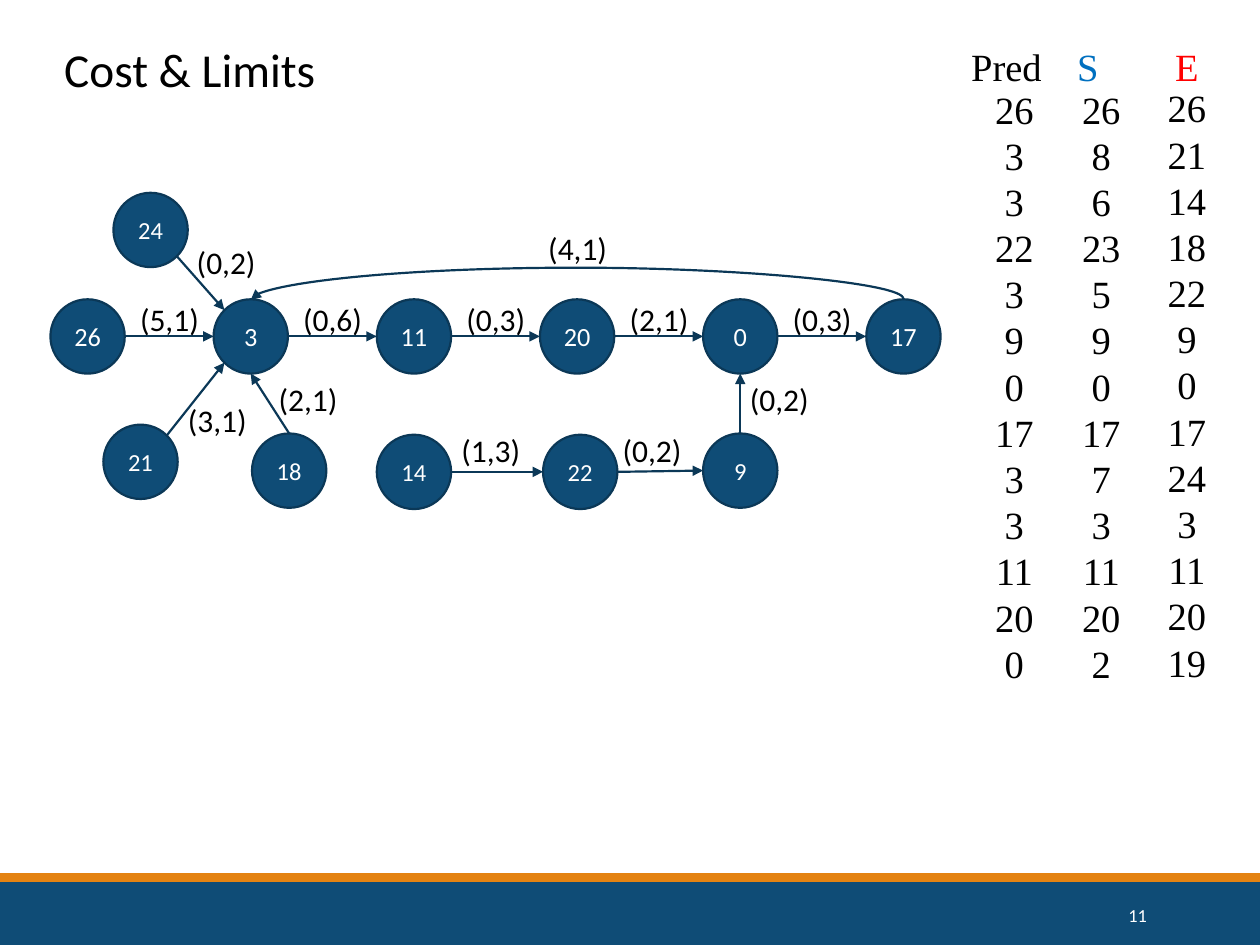
from math import cos, radians, sin

from lxml.etree import SubElement
from pptx import Presentation
from pptx.dml.color import RGBColor
from pptx.enum.shapes import MSO_CONNECTOR, MSO_SHAPE
from pptx.enum.text import MSO_ANCHOR, MSO_AUTO_SIZE, PP_ALIGN
from pptx.oxml.ns import qn
from pptx.util import Inches, Pt

BLUE = RGBColor(0x0F, 0x4C, 0x76)
DARK_BLUE = RGBColor(0x0B, 0x38, 0x57)
ORANGE = RGBColor(0xE4, 0x83, 0x12)
HEADER_BLUE = RGBColor(0x00, 0x70, 0xC0)
RED = RGBColor(0xFF, 0x00, 0x00)
BLACK = RGBColor(0x00, 0x00, 0x00)
WHITE = RGBColor(0xFF, 0xFF, 0xFF)

SANS = "Calibri"
SERIF = "Times New Roman"
DIAMETER = 0.59
STEP = 1.295  # distance between neighbours in the upper row

# Connection sites of an ellipse, counterclockwise from the top
TOP, TOP_LEFT, LEFT, BOTTOM_LEFT, BOTTOM, BOTTOM_RIGHT, RIGHT, TOP_RIGHT = range(8)


class GraphSlide:
    """Holds the slide, its style and the nodes drawn so far."""

    def __init__(self, slide):
        self.slide = slide
        self.nodes = {}

    def fill_text(self, shape, text, size, color=BLACK, font=SANS,
                  align=PP_ALIGN.CENTER, anchor=MSO_ANCHOR.TOP, spacing=None):
        frame = shape.text_frame
        frame.text = text
        frame.word_wrap = True
        frame.vertical_anchor = anchor
        for paragraph in frame.paragraphs:
            paragraph.alignment = align
            if spacing:
                paragraph.line_spacing = Pt(spacing)
            for run in paragraph.runs:
                run.font.name = font
                run.font.size = Pt(size)
                run.font.color.rgb = color

    def title(self, text, left, top, width, height):
        shape = self.slide.shapes.title
        shape.left, shape.top = Inches(left), Inches(top)
        shape.width, shape.height = Inches(width), Inches(height)
        self.fill_text(shape, text, 27, align=PP_ALIGN.LEFT)
        shape.text_frame.auto_size = MSO_AUTO_SIZE.NONE

    def text(self, text, left, top, width, height, size, **style):
        shape = self.slide.shapes.add_textbox(
            Inches(left), Inches(top), Inches(width), Inches(height))
        self.fill_text(shape, text, size, **style)

    def label(self, text, left, top):
        self.text(text, left, top, 0.71, 0.4, 18)

    def shape(self, kind, left, top, width, height, fill):
        shape = self.slide.shapes.add_shape(
            kind, Inches(left), Inches(top), Inches(width), Inches(height))
        shape.shadow.inherit = False
        shape.fill.solid()
        shape.fill.fore_color.rgb = fill
        shape.line.fill.background()
        return shape

    def node(self, name, left, top, size):
        shape = self.shape(MSO_SHAPE.OVAL, left, top, DIAMETER, DIAMETER, BLUE)
        shape.line.color.rgb = DARK_BLUE
        shape.line.width = Pt(1.25)
        frame = shape.text_frame
        frame.margin_left = frame.margin_right = 0
        self.fill_text(shape, name, size, WHITE, anchor=MSO_ANCHOR.MIDDLE)
        self.nodes[name] = shape

    def site_point(self, name, site):
        shape = self.nodes[name]
        angle = radians(90 + 45 * site)
        radius = shape.width / 2
        return (round(shape.left + radius * (1 + cos(angle))),
                round(shape.top + radius * (1 - sin(angle))))

    def arrow(self, start, start_site, end, end_site, kind=MSO_CONNECTOR.STRAIGHT):
        connector = self.slide.shapes.add_connector(
            kind, *self.site_point(start, start_site), *self.site_point(end, end_site))
        connector.line.color.rgb = DARK_BLUE
        connector.line.width = Pt(1.25)
        properties = connector.element.spPr
        SubElement(properties.find(qn("a:ln")), qn("a:tailEnd"), type="triangle")
        SubElement(properties, qn("a:effectLst"))
        # An ellipse has eight sites, so the joins are set directly
        joins = connector.element.nvCxnSpPr.cNvCxnSpPr
        for tag, name, site in (("a:stCxn", start, start_site), ("a:endCxn", end, end_site)):
            SubElement(joins, qn(tag), id=str(self.nodes[name].shape_id), idx=str(site))
        return connector

    def arch(self, start, end, rise):
        """Curved arrow over the tops of two nodes: a thin connector turned upright."""
        connector = self.arrow(start, TOP, end, TOP, MSO_CONNECTOR.CURVE)
        middle, top, span = connector.left + connector.width // 2, connector.top, connector.width
        thickness = Inches(0.01)
        connector.left, connector.top = middle - thickness // 2, top - span // 2
        connector.width, connector.height = thickness, span
        properties = connector.element.spPr
        transform = properties.find(qn("a:xfrm"))
        for key, value in (("rot", "16200000"), ("flipH", "1"), ("flipV", "1")):
            transform.set(key, value)
        geometry = properties.find(qn("a:prstGeom"))
        guides = geometry.find(qn("a:avLst"))
        if guides is None:
            guides = SubElement(geometry, qn("a:avLst"))
        ratio = round(-Inches(rise) / thickness * 100000)
        SubElement(guides, qn("a:gd"), name="adj1", fmla=f"val {ratio}")


def main():
    presentation = Presentation()
    presentation.slide_width, presentation.slide_height = Inches(10), Inches(7.5)
    graph = GraphSlide(presentation.slides.add_slide(presentation.slide_layouts[5]))

    # Footer bars, title and page number
    graph.shape(MSO_SHAPE.RECTANGLE, 0, 7, 10, 0.5, BLUE)
    graph.shape(MSO_SHAPE.RECTANGLE, 0, 6.93, 10, 0.07, ORANGE)
    graph.title("Cost & Limits", 0.41, 0.27, 4.43, 0.56)
    graph.text("11", 8.12, 7.06, 1.08, 0.4, 10.5, color=WHITE,
               align=PP_ALIGN.RIGHT, anchor=MSO_ANCHOR.MIDDLE)

    # Columns of numbers: header with its left, width, colour and alignment, then the list
    columns = [
        ("Pred", 7.61, 0.88, BLACK, PP_ALIGN.LEFT, 7.76, 0.63,
         "26 3 3 22 3 9 0 17 3 3 11 20 0"),
        ("S", 8.45, 0.58, HEADER_BLUE, PP_ALIGN.LEFT, 8.45, 0.63,
         "26 8 6 23 5 9 0 17 7 3 11 20 2"),
        ("E", 9.13, 0.58, RED, PP_ALIGN.CENTER, 9.13, 0.62,
         "26 21 14 18 22 9 0 17 24 3 11 20 19"),
    ]
    for header, header_left, width, color, align, left, top, values in columns:
        graph.text(header, header_left, 0.27, width, 0.47, 22, color=color,
                   font=SERIF, align=align, spacing=28)
        graph.text("\n".join(values.split()), left, top, 0.58, 4.91, 22,
                   font=SERIF, spacing=26.4)

    # Nodes: the evenly spaced upper row, then the others
    chain = ["26", "3", "11", "20", "0", "17"]
    for index, name in enumerate(chain):
        graph.node(name, 0.4 + STEP * index, 2.375, 15)
    for name, left, top in [("24", 0.9, 1.53), ("21", 0.82, 3.37), ("18", 2, 3.44),
                            ("14", 2.99, 3.45), ("22", 4.31, 3.45), ("9", 5.58, 3.44)]:
        graph.node(name, left, top, 14)

    # Arrows and labels along the upper row
    chain_labels = ["(5,1)", "(0,6)", "(0,3)", "(2,1)", "(0,3)"]
    for index, (start, end, label) in enumerate(zip(chain, chain[1:], chain_labels)):
        graph.arrow(start, RIGHT, end, LEFT)
        graph.label(label, 0.99 + STEP * index, 2.33)

    # Other arrows with their labels
    for start, start_site, end, end_site, label, left, top in [
        ("24", BOTTOM_RIGHT, "3", TOP_LEFT, "(0,2)", 1.44, 1.88),
        ("21", TOP_RIGHT, "3", BOTTOM_LEFT, "(3,1)", 1.37, 3.13),
        ("18", TOP, "3", BOTTOM, "(2,1)", 2.09, 2.97),
        ("14", RIGHT, "22", LEFT, "(1,3)", 3.54, 3.37),
        ("22", RIGHT, "9", LEFT, "(0,2)", 4.82, 3.37),
        ("9", TOP, "0", BOTTOM, "(0,2)", 5.83, 2.97),
    ]:
        graph.arrow(start, start_site, end, end_site)
        graph.label(label, left, top)

    # Return arrow
    graph.arch("17", "3", 0.25)
    graph.label("(4,1)", 4.23, 1.77)

    presentation.save("out.pptx")


if __name__ == "__main__":
    main()
